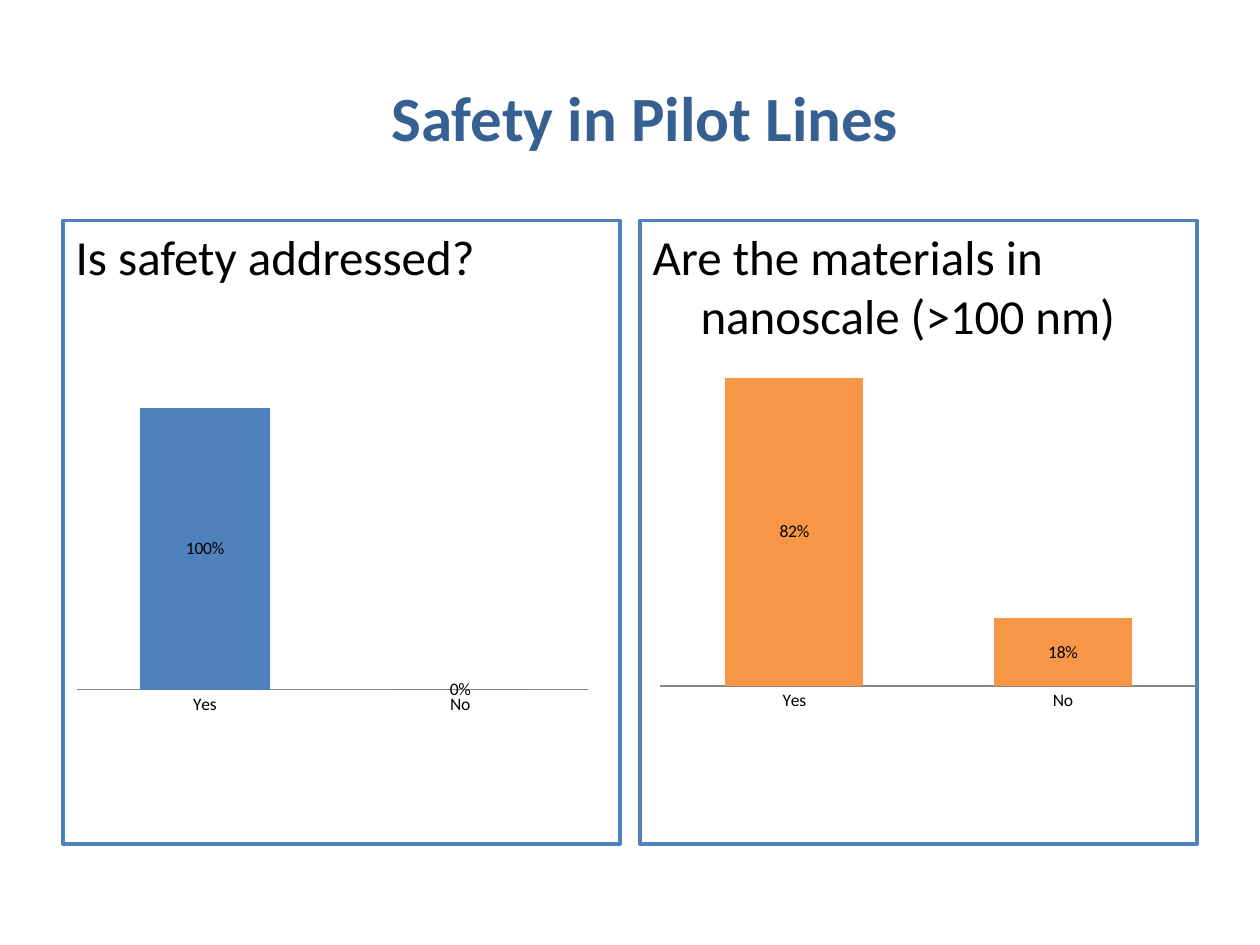
"""Builds the slide on safety in pilot lines."""
from lxml.etree import SubElement
from pptx import Presentation
from pptx.chart.data import CategoryChartData
from pptx.dml.color import RGBColor
from pptx.enum.chart import XL_CHART_TYPE as ChartType
from pptx.enum.chart import XL_LABEL_POSITION as LabelPosition
from pptx.enum.chart import XL_TICK_MARK as TickMark
from pptx.enum.text import MSO_ANCHOR as Anchor
from pptx.enum.text import MSO_AUTO_SIZE as AutoSize
from pptx.enum.text import PP_ALIGN as Align
from pptx.oxml.ns import qn
from pptx.util import Inches, Pt

WHITE = RGBColor(0xFF, 0xFF, 0xFF)
BLACK = RGBColor(0x00, 0x00, 0x00)
NAVY = RGBColor(0x37, 0x60, 0x92)
BLUE = RGBColor(0x4F, 0x81, 0xBD)
ORANGE = RGBColor(0xF7, 0x96, 0x46)
GRAY = RGBColor(0x86, 0x86, 0x86)

PANEL_LEFT, PANEL_TOP = 0.5, 1.75
PANEL_WIDTH, PANEL_HEIGHT, PANEL_GAP = 4.42, 4.95, 0.16

PANELS = [
    {"question": "Is safety addressed?", "shares": (1, 0), "color": BLUE,
     "top_value": 1.2, "axis_width": 0.75, "chart_box": (0.53, 2.73, 4.22, 3)},
    {"question": "Are the materials in nanoscale (>100 nm)",
     "shares": (0.82, 0.18), "color": ORANGE,
     "top_value": 0.9, "axis_width": 1.5, "chart_box": (5.15, 2.7, 4.44, 3)},
]


def set_values(target, values):
    """Set each named attribute of the target."""
    for name, value in values.items():
        setattr(target, name, value)


def place(shape, box):
    """Move and size a shape to a box in inches."""
    names = ("left", "top", "width", "height")
    set_values(shape, dict(zip(names, map(Inches, box))))


def format_font(font, size, color, bold=False):
    """Format a font in the slide's typeface."""
    set_values(font, {"name": "Calibri", "size": Pt(size), "bold": bold})
    font.color.rgb = color


def add_title(shape, box):
    """Fill the title placeholder."""
    place(shape, box)
    frame = shape.text_frame
    set_values(frame, {"text": "Safety in Pilot Lines",
                       "vertical_anchor": Anchor.MIDDLE,
                       "word_wrap": True, "auto_size": AutoSize.NONE})
    para = frame.paragraphs[0]
    para.alignment = Align.CENTER
    format_font(para.runs[0].font, 36, NAVY, True)


def add_panel(shape, box, question):
    """Fill a body placeholder as a framed panel with its question."""
    place(shape, box)
    shape.fill.solid()
    shape.fill.fore_color.rgb = WHITE
    shape.line.color.rgb = BLUE
    shape.line.width = Pt(2)
    frame = shape.text_frame
    set_values(frame, {"text": question, "vertical_anchor": Anchor.TOP,
                       "word_wrap": True, "auto_size": AutoSize.NONE})
    para = frame.paragraphs[0]
    properties = para._p.get_or_add_pPr()
    properties.set("marL", str(Inches(0.38)))
    properties.set("indent", str(Inches(-0.38)))
    SubElement(properties, qn("a:buNone"))
    para.space_before = Pt(0)
    format_font(para.runs[0].font, 28, BLACK)


def add_share_chart(page, box, shares, color, top_value, axis_width):
    """Add a column chart of the yes and no shares."""
    data = CategoryChartData(number_format="0%")
    data.categories = ["Yes", "No"]
    data.add_series("Series 1", shares)
    chart = page.shapes.add_chart(
        ChartType.COLUMN_STACKED, *map(Inches, box), data).chart
    set_values(chart, {"has_legend": False, "has_title": False})
    format_font(chart.font, 10, BLACK)

    set_values(chart.value_axis, {
        "visible": False, "has_major_gridlines": False,
        "minimum_scale": 0, "maximum_scale": top_value})
    axis = chart.category_axis
    set_values(axis, {"major_tick_mark": TickMark.NONE,
                      "minor_tick_mark": TickMark.NONE})
    axis.format.line.color.rgb = GRAY
    axis.format.line.width = Pt(axis_width)

    plot = chart.plots[0]
    set_values(plot, {"gap_width": 95, "overlap": 100,
                      "vary_by_categories": False, "has_data_labels": True})
    set_values(plot.data_labels, {
        "show_value": True, "number_format": "0%",
        "number_format_is_linked": False, "position": LabelPosition.CENTER})
    format_font(plot.data_labels.font, 10, BLACK)
    fill = plot.series[0].format.fill
    fill.solid()
    fill.fore_color.rgb = color


def main():
    """Build and save the deck."""
    deck = Presentation()
    set_values(deck, {"slide_width": Inches(10), "slide_height": Inches(7.5)})
    page = deck.slides.add_slide(deck.slide_layouts[3])
    add_title(page.shapes.title, (2.01, 0.3, 6.22, 1.25))
    for index, panel in enumerate(PANELS):
        left = PANEL_LEFT + index * (PANEL_WIDTH + PANEL_GAP)
        add_panel(page.placeholders[index + 1],
                  (left, PANEL_TOP, PANEL_WIDTH, PANEL_HEIGHT),
                  panel["question"])
        add_share_chart(page, panel["chart_box"], panel["shares"],
                        panel["color"], panel["top_value"],
                        panel["axis_width"])
    deck.save("out.pptx")


if __name__ == "__main__":
    main()
